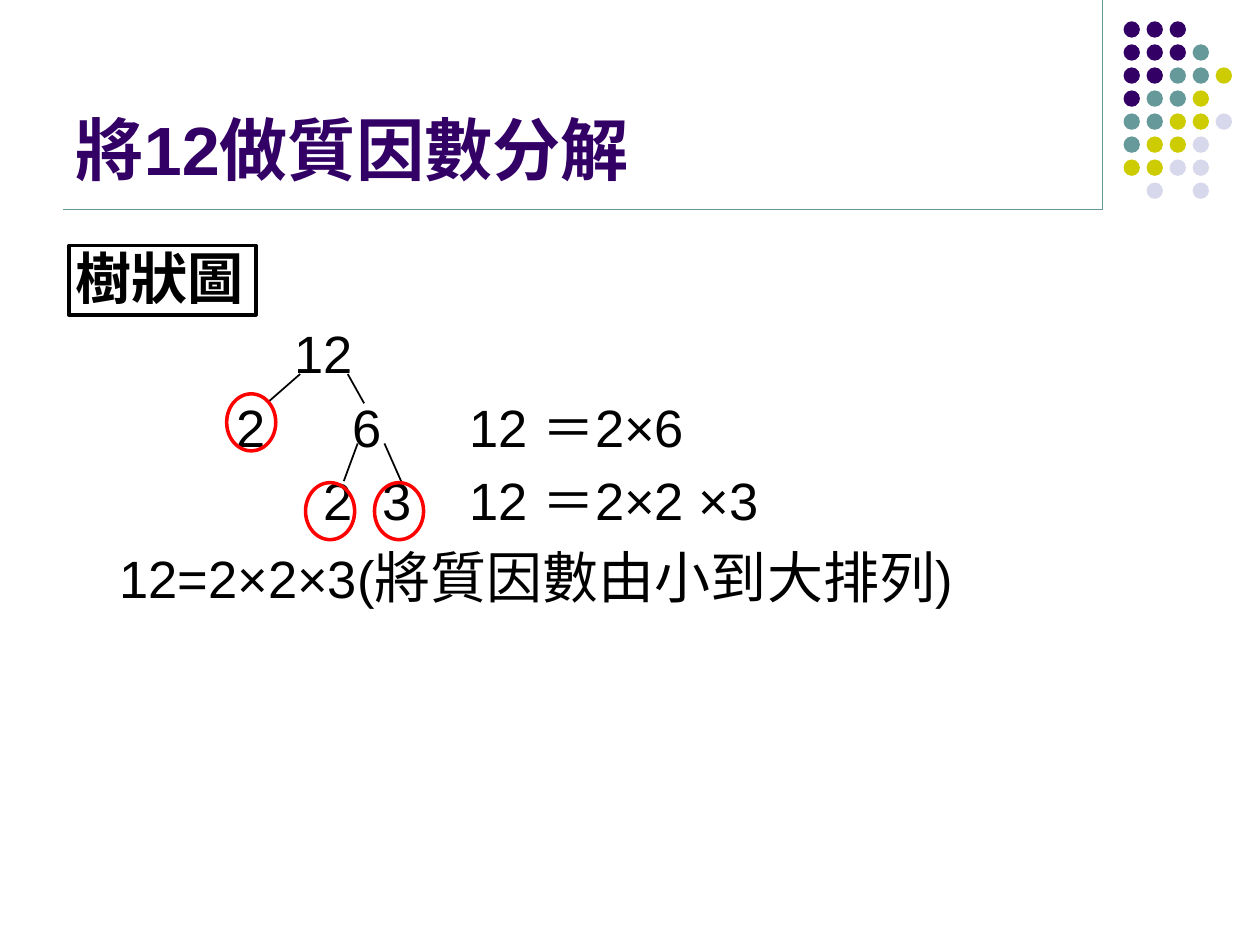
from lxml import etree
from pptx import Presentation
from pptx.dml.color import RGBColor
from pptx.enum.shapes import MSO_CONNECTOR, MSO_SHAPE
from pptx.enum.text import MSO_ANCHOR, MSO_AUTO_SIZE, PP_ALIGN
from pptx.oxml.ns import qn
from pptx.util import Cm, Pt

LINE = MSO_CONNECTOR.STRAIGHT
OVAL, RECT = MSO_SHAPE.OVAL, MSO_SHAPE.RECTANGLE
LEFT, BOTTOM, TOP = PP_ALIGN.LEFT, MSO_ANCHOR.BOTTOM, MSO_ANCHOR.TOP
NO_FIT = MSO_AUTO_SIZE.NONE
STEP = 8.34  # width in points of one space at 30 pt


def color(code):
    return RGBColor.from_string(code)


def place(item, box):
    for name, size in zip(("left", "top", "width", "height"), box):
        setattr(item, name, Cm(size))


prs = Presentation()
prs.slide_width, prs.slide_height = Cm(25.4), Cm(19.05)
slide = prs.slides.add_slide(prs.slide_layouts[1])
shapes = slide.shapes

# Each row: indent in steps, then its runs; a number is a gap in steps
title, body = slide.placeholders
big = {"size": Pt(32), "bold": False}
mid = {"size": Pt(30), "bold": False}
head = {"size": Pt(39), "bold": True}
title_rows = [(0, [("將12做質因數分解", head)])]
body_rows = [
    (0, [("樹狀圖", {"size": Pt(32), "bold": True})]),
    (15, [("12", mid)]),
    (11, [("2", mid), (6, mid), ("6", mid), (6, mid), ("12 ＝2×6", mid)]),
    (17, [("2", mid), (2, mid), ("3", mid), (4, mid), ("12 ＝2×2 ×3", mid)]),
    (3, [("12=2×2×3(", mid), ("將質因數由小到大排列", big), (")", mid)]),
]
for holder, box, anchor, ink, rows in (
    (title, (1.27, 0.33, 20.96, 3.61), BOTTOM, "330066", title_rows),
    (body, (1.27, 4.78, 22.86, 12.24), TOP, "000000", body_rows),
):
    place(holder, box)
    frame = holder.text_frame
    for name, value in {"word_wrap": True, "auto_size": NO_FIT,
                        "vertical_anchor": anchor}.items():
        setattr(frame, name, value)
    for i, (indent, runs) in enumerate(rows):
        para = frame.add_paragraph() if i else frame.paragraphs[0]
        para.alignment = LEFT
        props = para._p.get_or_add_pPr()
        props.set("marL", str(int(Pt(indent * STEP))))
        props.set("indent", "0")
        etree.SubElement(props, qn("a:buNone"))
        for text, form in runs:
            run = para.add_run()
            if isinstance(text, int):
                # One space, widened by letter spacing in 1/100 pt
                run.text = " "
                run.font._element.set("spc", str(round((text - 1) * STEP * 100)))
            else:
                run.text = text
            run.font.color.rgb = color(ink)
            for name, value in {"name": "Arial", **form}.items():
                setattr(run.font, name, value)

# Corner dots: one letter a dot, one string a row
fills = {"P": "330066", "T": "669999", "Y": "CCCC00", "L": "D8D8EC"}
dots = ["PPP", "PPPT", "PPTTY", "PTTY", "TTYYL", "TYYL", "YYLL", " L L"]
pitch = 3.25 / 7
for row, marks in enumerate(dots):
    for col, mark in enumerate(marks):
        if mark in fills:
            dot = shapes.add_shape(OVAL, Cm(22.65 + pitch * col),
                                   Cm(0.43 + pitch * row), Cm(0.33), Cm(0.33))
            dot.shadow.inherit = False
            dot.fill.solid()
            dot.fill.fore_color.rgb = color(fills[mark])
            dot.line.fill.background()

# Frame rules and tree branches
rule, branch = ("669999", 0.75), ("000000", 1)
for ends, (ink, width) in (
    ((22.23, 0, 22.23, 4.23), rule),
    ((1.27, 4.23, 22.23, 4.23), rule),
    ((6.05, 7.54, 5.41, 8.1), branch),
    ((7.01, 7.54, 7.34, 8.13), branch),
    ((7.21, 8.94, 6.93, 9.7), branch),
    ((7.75, 8.94, 8.1, 9.73), branch),
):
    line = shapes.add_connector(LINE, *map(Cm, ends))
    line.line.color.rgb = color(ink)
    line.line.width = Pt(width)
    etree.SubElement(line._element.spPr, qn("a:effectLst"))

# Rings round the primes and the box round the heading
for kind, box, ink in (
    (OVAL, (4.57, 7.94, 0.99, 1.15), "FF0000"),
    (OVAL, (6.16, 9.73, 0.99, 1.15), "FF0000"),
    (OVAL, (7.55, 9.73, 0.99, 1.15), "FF0000"),
    (RECT, (1.39, 4.95, 3.77, 1.4), "000000"),
):
    ring = shapes.add_shape(kind, *map(Cm, box))
    ring.shadow.inherit = False
    ring.fill.background()
    ring.line.color.rgb = color(ink)
    ring.line.width = Pt(2)

prs.save("out.pptx")
